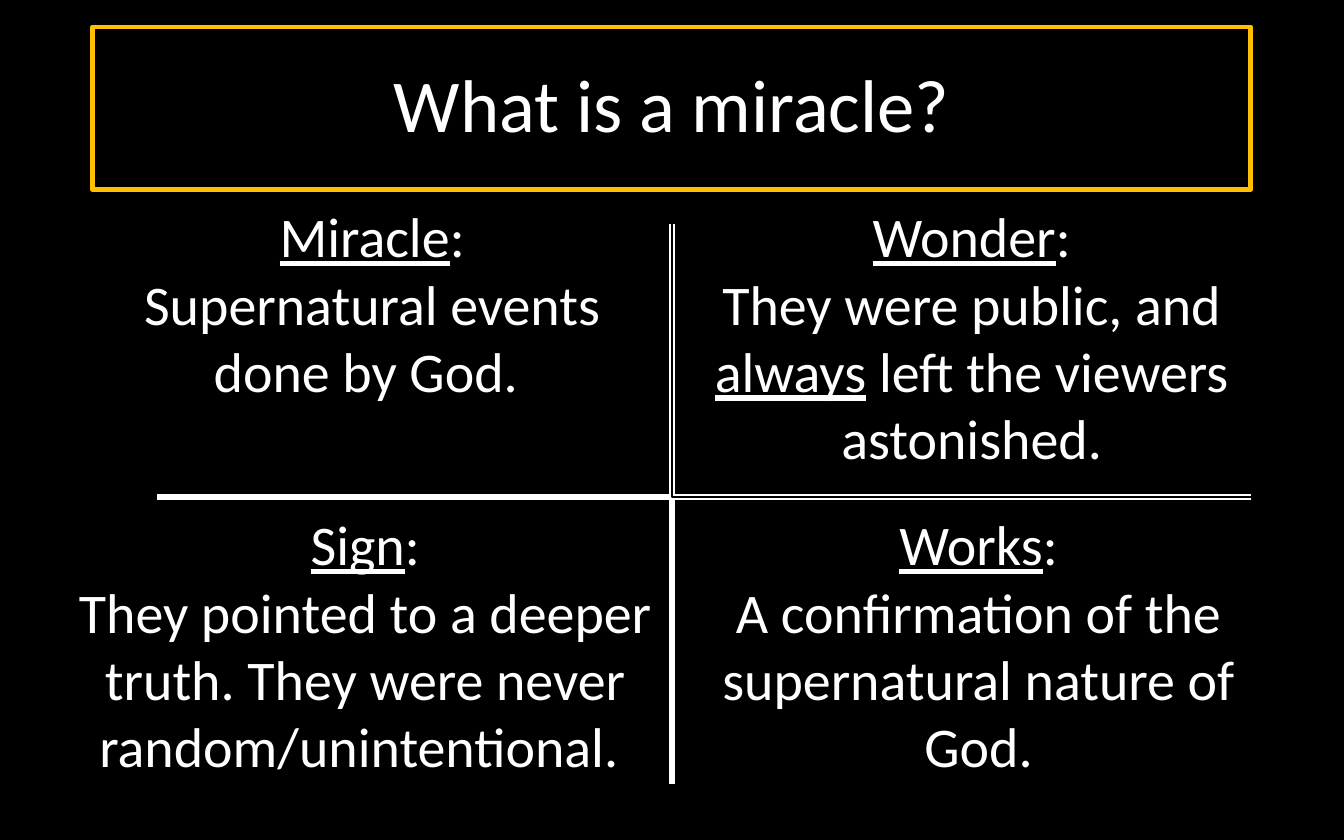
from lxml.etree import SubElement
from pptx import Presentation
from pptx.dml.color import RGBColor
from pptx.enum.shapes import MSO_CONNECTOR
from pptx.enum.text import MSO_ANCHOR, PP_ALIGN
from pptx.oxml.ns import qn
from pptx.util import Cm, Pt

BLACK = RGBColor(0x00, 0x00, 0x00)
WHITE = RGBColor(0xFF, 0xFF, 0xFF)
GOLD = RGBColor(0xFF, 0xC0, 0x00)

BOX_WIDTH, BOX_HEIGHT = Cm(11.33), Cm(5.69)
UPPER_TOP, LOWER_TOP = Cm(3.71), Cm(9.53)
CENTER_X, CENTER_Y = Cm(12.7), Cm(9.4)
FRAME_FORMAT = {
    "word_wrap": True,
    "vertical_anchor": MSO_ANCHOR.TOP,
    "margin_left": Cm(0.21),
    "margin_right": Cm(0.21),
    "margin_top": Cm(0.11),
    "margin_bottom": Cm(0.11),
}


def write_paragraph(paragraph, pieces, size):
    paragraph.alignment = PP_ALIGN.CENTER
    for text, underlined in pieces:
        run = paragraph.add_run()
        run.text = text
        run.font.name = "Calibri"
        run.font.size = Pt(size)
        run.font.color.rgb = WHITE
        run.font.underline = underlined


def add_definition(left, top, term, meaning):
    definition = slide.shapes.add_textbox(left, top, BOX_WIDTH, BOX_HEIGHT)
    definition.line.color.rgb = BLACK
    definition.line.width = Pt(0.75)
    frame = definition.text_frame
    for name, value in FRAME_FORMAT.items():
        setattr(frame, name, value)
    write_paragraph(frame.paragraphs[0], [(term, True), (":", False)], 30)
    write_paragraph(frame.add_paragraph(), meaning, 30)


presentation = Presentation()
presentation.slide_width = Cm(25.4)
presentation.slide_height = Cm(15.88)
slide = presentation.slides.add_slide(presentation.slide_layouts[5])
slide.background.fill.solid()
slide.background.fill.fore_color.rgb = BLACK

question = slide.shapes.title
question_place = {"left": Cm(1.75), "top": Cm(0.51), "width": Cm(21.89), "height": Cm(3.07)}
for name, value in question_place.items():
    setattr(question, name, value)
question.line.color.rgb = GOLD
question.line.width = Pt(2.5)
question.text_frame.vertical_anchor = MSO_ANCHOR.MIDDLE
question_line = question.text_frame.paragraphs[0]
question_line.line_spacing = 0.9
write_paragraph(question_line, [("What is a miracle?", False)], 40)

add_definition(Cm(1.37), UPPER_TOP, "Miracle",
               [("Supernatural events done by God. ", False)])

for ends in [
    (CENTER_X, Cm(4.24), CENTER_X, Cm(14.83)),
    (Cm(23.65), CENTER_Y, Cm(2.97), CENTER_Y),
]:
    divider = slide.shapes.add_connector(MSO_CONNECTOR.STRAIGHT, *ends)
    divider.line.color.rgb = WHITE
    divider.line.width = Pt(3)
    SubElement(divider._element.spPr, qn("a:effectLst"))

for left, top, term, meaning in [
    (CENTER_X, UPPER_TOP, "Wonder",
     [("They were public, and ", False), ("always", True),
      (" left the viewers astonished.", False)]),
    (Cm(1.24), LOWER_TOP, "Sign",
     [("They pointed to a deeper truth. They were never random/unintentional. ", False)]),
    (Cm(12.83), LOWER_TOP, "Works",
     [("A confirmation of the supernatural nature of God.", False)]),
]:
    add_definition(left, top, term, meaning)

presentation.save("out.pptx")
